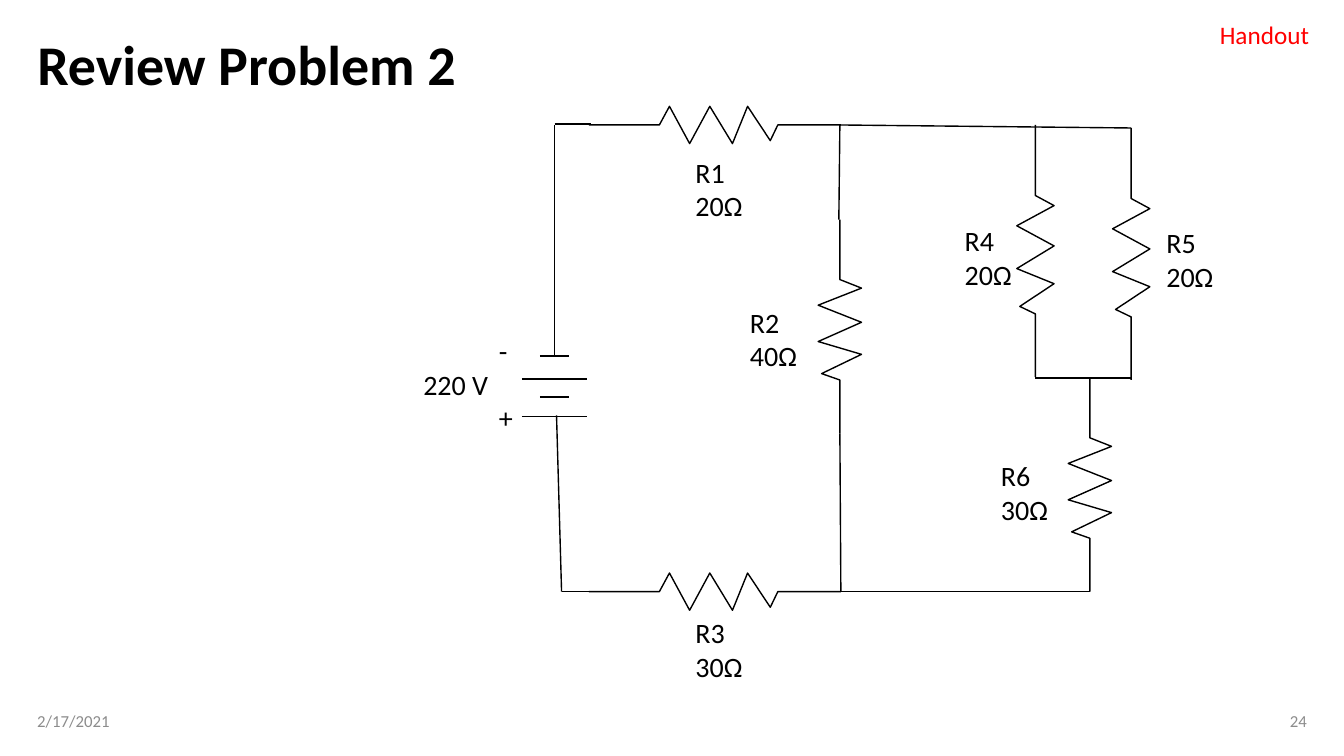
from collections import namedtuple

from lxml import etree
from pptx import Presentation
from pptx import util as u
from pptx.dml import color
from pptx.enum import shapes, text
from pptx.oxml import ns

# Content
TITLE = "Review Problem 2"
HANDOUT = "Handout"
DATE, PAGE = "2/17/2021", "24"
BATTERY = ["-", "220 V", "+"]
LABELS = [  # name, ohms, left, top
    ("R1", "20Ω", 6.8, 1.49),
    ("R2", "40Ω", 7.34, 2.98),
    ("R3", "30Ω", 6.8, 6.06),
    ("R4", "20Ω", 9.47, 2.17),
    ("R5", "20Ω", 11.47, 2.19),
    ("R6", "30Ω", 9.83, 4.5),
]

# Grid of the circuit, in inches
SLIDE_W, SLIDE_H = 13.33, 7.5
MARGIN = 0.27
COL = {"source": 5.5, "left": 5.84, "r2": 8.33, "r4": 10.27, "r6": 10.81, "r5": 11.22}
ROW = {"top": 1.24, "r5": 1.27, "r2": 2.18, "join": 3.75, "r2_end": 4.3, "bottom": 5.87}

# Resistors: start x, start y, length, swing, vertical
LONG, SHORT = (2.5, 0.37), (2.12, 0.43)
RESISTORS = [
    (COL["left"], ROW["top"], *LONG, False),
    (COL["left"], ROW["bottom"], *LONG, False),
    (COL["r4"], ROW["top"], *LONG, True),
    (COL["r5"], ROW["r5"], *LONG, True),
    (COL["r2"], ROW["r2"], *SHORT, True),
    (COL["r6"], ROW["join"], *SHORT, True),
]
# Zigzag as shares: along the length, across the swing from the axis
ZIGZAG = [(0, 0), (0.28, 0), (0.32, -0.5), (0.4, 0.5), (0.48, -0.5), (0.57, 0.5),
          (0.63, -0.5), (0.72, 0.42), (0.75, 0), (1, 0)]

WIRES = [
    (COL["r2"], ROW["top"], COL["r5"], ROW["r5"]),
    (COL["r2"], ROW["top"], 8.32, ROW["r2"]),
    (COL["r2"], ROW["r2_end"], 8.34, ROW["bottom"]),
    (8.34, ROW["bottom"], COL["r6"], ROW["bottom"]),
    (COL["r4"], ROW["join"], COL["r5"], ROW["join"]),
    (COL["source"], ROW["top"], COL["source"], 3.53),
    (5.52, 4.12, 5.57, ROW["bottom"]),
    (COL["source"], 1.23, 5.86, 1.23),
    (5.57, ROW["bottom"], COL["left"], ROW["bottom"]),
]
PLATES = [(3.53, 0.29), (3.76, 0.65), (3.94, 0.29), (4.13, 0.65)]  # y, width

Theme = namedtuple("Theme", "font ink accent muted title label handout footer line")
THEME = Theme("Calibri", "000000", "FF0000", "8C8C8C", 40, 20, 18, 12, 1)


def write(tf, lines, size, ink, bold=False, align=None):
    for i, line in enumerate(lines):
        p = tf.paragraphs[0] if i == 0 else tf.add_paragraph()
        p.alignment = align
        r = p.add_run()
        r.text = line
        r.font.name = THEME.font
        r.font.size = u.Pt(size)
        r.font.bold = bold
        r.font.color.rgb = color.RGBColor.from_string(ink)


def add_text(slide, box, lines, size, ink, wrap=False, align=None,
             anchor=text.MSO_ANCHOR.TOP):
    tf = slide.shapes.add_textbox(*map(u.Inches, box)).text_frame
    tf.word_wrap = wrap
    tf.vertical_anchor = anchor
    write(tf, lines, size, ink, align=align)
    return tf


def set_line(sp):
    sp.line.color.rgb = color.RGBColor.from_string(THEME.ink)
    sp.line.width = u.Pt(THEME.line)


def add_wire(slide, *ends):
    sp = slide.shapes.add_connector(shapes.MSO_CONNECTOR.STRAIGHT, *map(u.Inches, ends))
    set_line(sp)
    etree.SubElement(sp._element.spPr, ns.qn("a:effectLst"))


def add_resistor(slide, x, y, length, swing, vertical):
    points = []
    for along, across in ZIGZAG:
        a, c = along * length, across * swing
        px, py = (x - c, y + a) if vertical else (x + a, y + c)
        points.append((u.Inches(px), u.Inches(py)))
    builder = slide.shapes.build_freeform(*points[0])
    builder.add_line_segments(points[1:], close=False)
    sp = builder.convert_to_shape()
    sp.fill.background()
    sp.shadow.inherit = False
    set_line(sp)


def main():
    prs = Presentation()
    prs.slide_width, prs.slide_height = u.Inches(SLIDE_W), u.Inches(SLIDE_H)
    slide = prs.slides.add_slide(prs.slide_layouts[5])

    # Title
    title = slide.shapes.title
    title.left, title.top = u.Inches(MARGIN), u.Inches(MARGIN)
    title.width, title.height = u.Inches(4.8), u.Inches(0.8)
    tf = title.text_frame
    tf.vertical_anchor = text.MSO_ANCHOR.MIDDLE
    write(tf, [TITLE], THEME.title, THEME.ink, True, text.PP_ALIGN.LEFT)
    tf.paragraphs[0].line_spacing = 0.9

    # Handout mark and footer
    add_text(slide, (12, 0.14, 1.1, 0.4), [HANDOUT], THEME.handout, THEME.accent)
    footer_w = 3.64
    for line, left, align in (
        (DATE, MARGIN, text.PP_ALIGN.LEFT),
        (PAGE, SLIDE_W - MARGIN - footer_w, text.PP_ALIGN.RIGHT),
    ):
        add_text(slide, (left, 6.95, footer_w, 0.4), [line], THEME.footer,
                 THEME.muted, True, align, text.MSO_ANCHOR.MIDDLE)

    # Circuit
    for resistor in RESISTORS:
        add_resistor(slide, *resistor)
    for wire in WIRES:
        add_wire(slide, *wire)
    for y, width in PLATES:
        add_wire(slide, COL["source"] - width / 2, y, COL["source"] + width / 2, y)

    # Labels
    for name, ohms, left, top in LABELS:
        add_text(slide, (left, top, 0.67, 0.77), [name, ohms], THEME.label, THEME.ink)
    tf = add_text(slide, (4.1, 3.26, 1.4, 1.1), BATTERY, THEME.label, THEME.ink, True)
    for pole in (tf.paragraphs[0], tf.paragraphs[-1]):
        pole._p.get_or_add_pPr().set("marL", str(u.Inches(0.75)))

    prs.save("out.pptx")


if __name__ == "__main__":
    main()
